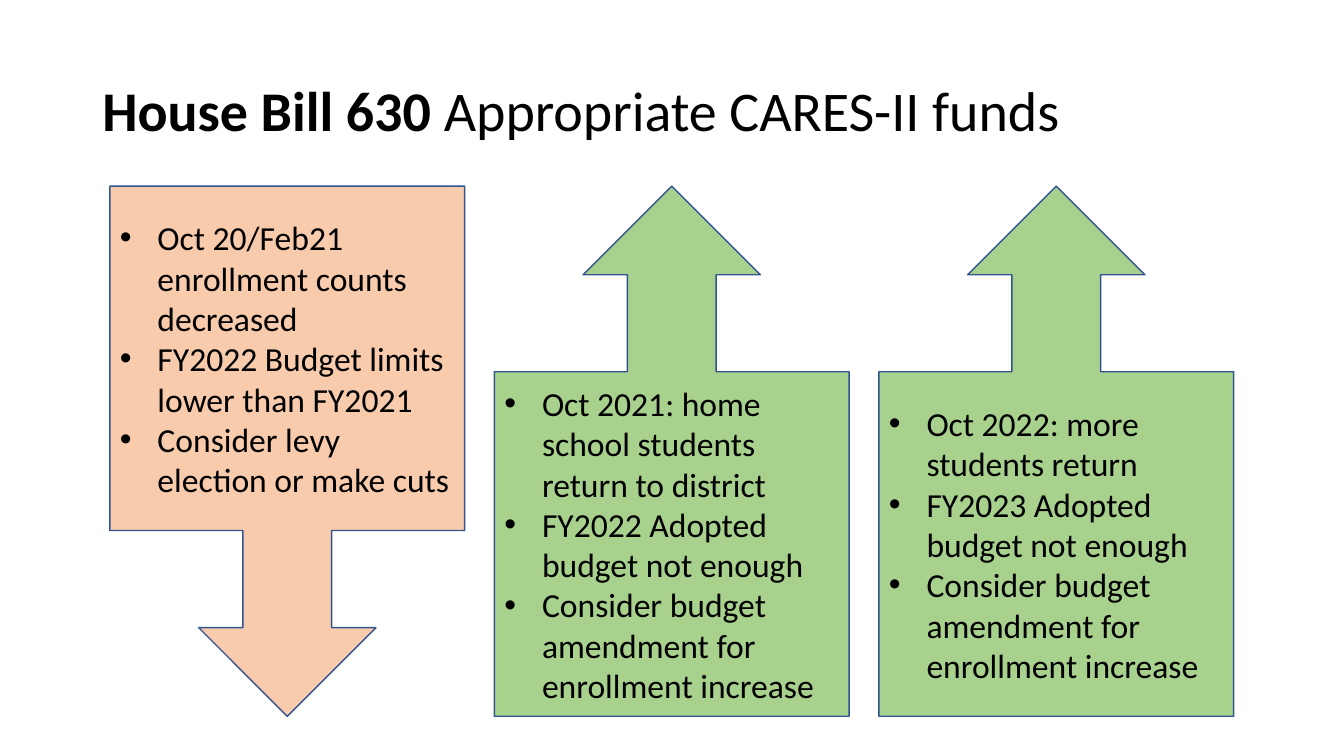
from dataclasses import dataclass

from lxml import etree
from pptx import Presentation
from pptx import util as u
from pptx.dml.color import RGBColor
from pptx.enum import shapes, text
from pptx.oxml.ns import qn


@dataclass(frozen=True)
class Theme:
    font: str = "Calibri"
    title_size: int = 40
    body_size: int = 24
    ink: str = "000000"
    outline: str = "325491"
    decrease: str = "F8CBAD"
    increase: str = "A9D18E"


@dataclass(frozen=True)
class Callout:
    direction: shapes.MSO_SHAPE
    fill: str
    points: tuple[str, ...]


THEME = Theme()
DOWN = shapes.MSO_SHAPE.DOWN_ARROW_CALLOUT
UP = shapes.MSO_SHAPE.UP_ARROW_CALLOUT
AMENDMENT = "Consider budget amendment for enrollment increase"

CALLOUTS = (
    Callout(DOWN, THEME.decrease, (
        "Oct 20/Feb21 enrollment counts decreased",
        "FY2022 Budget limits lower than FY2021",
        "Consider levy election or make cuts",
    )),
    Callout(UP, THEME.increase, (
        "Oct 2021: home school students return to district",
        "FY2022 Adopted budget not enough",
        AMENDMENT,
    )),
    Callout(UP, THEME.increase, (
        "Oct 2022: more students return",
        "FY2023 Adopted budget not enough",
        AMENDMENT,
    )),
)

FIRST_LEFT, CALLOUT_TOP = u.Cm(2.77), u.Cm(4.69)
CALLOUT_WIDTH, CALLOUT_HEIGHT = u.Cm(8.94), u.Cm(13.36)
CALLOUT_PITCH = u.Cm(9.69)
BULLET_INDENT = u.Cm(0.95)


def add_run(paragraph, wording: str, size: int, bold: bool = False) -> None:
    run = paragraph.add_run()
    run.text = wording
    run.font.name = THEME.font
    run.font.size = u.Pt(size)
    run.font.bold = bold
    run.font.color.rgb = RGBColor.from_string(THEME.ink)


def add_bullet(paragraph) -> None:
    """Give the paragraph a round bullet with a hanging indent."""
    properties = paragraph._p.get_or_add_pPr()
    properties.set("marL", str(BULLET_INDENT))
    properties.set("indent", str(-BULLET_INDENT))
    etree.SubElement(properties, qn("a:buFont")).set("typeface", "Arial")
    etree.SubElement(properties, qn("a:buChar")).set("char", "•")


def add_title(slide) -> None:
    title = slide.shapes.add_textbox(u.Cm(2.33), u.Cm(1.01), u.Cm(29.21), u.Cm(3.68))
    frame = title.text_frame
    frame.word_wrap = True
    frame.vertical_anchor = text.MSO_ANCHOR.MIDDLE
    heading = frame.paragraphs[0]
    heading.line_spacing = 0.9
    add_run(heading, "House Bill 630 ", THEME.title_size, bold=True)
    add_run(heading, "Appropriate CARES-II funds", THEME.title_size)


def add_callout(slide, callout: Callout, left: int) -> None:
    arrow = slide.shapes.add_shape(
        callout.direction, left, CALLOUT_TOP, CALLOUT_WIDTH, CALLOUT_HEIGHT
    )
    arrow.shadow.inherit = False
    arrow.fill.solid()
    arrow.fill.fore_color.rgb = RGBColor.from_string(callout.fill)
    arrow.line.color.rgb = RGBColor.from_string(THEME.outline)
    arrow.line.width = u.Pt(1)

    frame = arrow.text_frame
    frame.word_wrap = True
    frame.vertical_anchor = text.MSO_ANCHOR.MIDDLE
    for index, point in enumerate(callout.points):
        paragraph = frame.add_paragraph() if index else frame.paragraphs[0]
        paragraph.alignment = text.PP_ALIGN.LEFT
        add_bullet(paragraph)
        add_run(paragraph, point, THEME.body_size)


def main() -> None:
    deck = Presentation()
    deck.slide_width, deck.slide_height = u.Cm(33.87), u.Cm(19.05)
    slide = deck.slides.add_slide(deck.slide_layouts[6])
    add_title(slide)
    for column, callout in enumerate(CALLOUTS):
        add_callout(slide, callout, FIRST_LEFT + column * CALLOUT_PITCH)
    deck.save("out.pptx")


if __name__ == "__main__":
    main()
